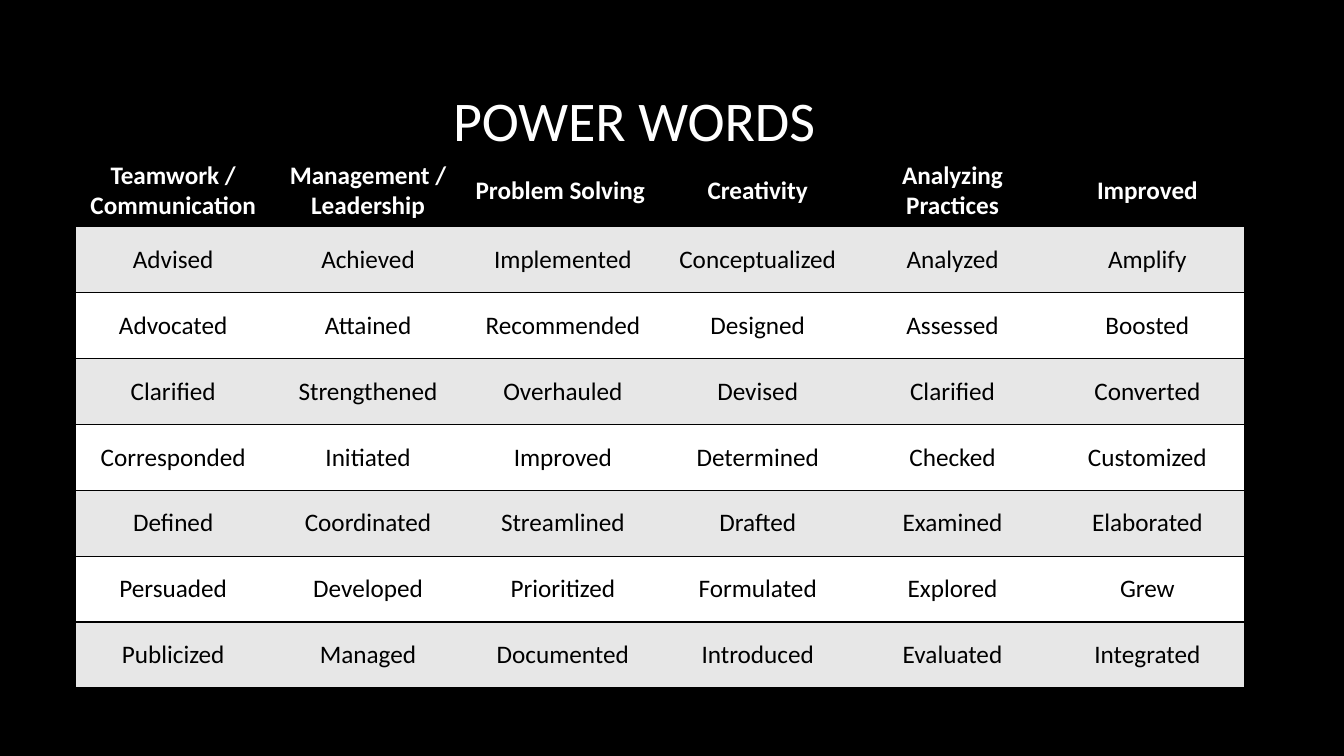
from dataclasses import dataclass

from lxml import etree
from pptx import Presentation
from pptx.dml.color import RGBColor
from pptx.enum.text import MSO_ANCHOR, MSO_AUTO_SIZE, PP_ALIGN
from pptx.oxml.ns import qn
from pptx.table import _Cell
from pptx.text.text import _Paragraph
from pptx.util import Cm, Pt

LEFT, MID = PP_ALIGN.LEFT, PP_ALIGN.CENTER
TOP, CENTER = MSO_ANCHOR.TOP, MSO_ANCHOR.MIDDLE
FIXED = MSO_AUTO_SIZE.NONE

FONT = "Calibri"
COLORS = {"black": "000000", "white": "FFFFFF", "gray": "E7E7E7"}
NO_STYLE = "{2D5ABB26-0587-4C30-8999-92F81FD0307C}"
COL_W, HEAD_H, ROW_H = Cm(4.91), Cm(1.8), Cm(1.66)


@dataclass
class Group:
    head: list[str]
    words: list[str]
    align: PP_ALIGN = MID
    anchor: MSO_ANCHOR = CENTER


GROUPS = [
    Group(["Teamwork /", "Communication"],
          ["Advised", "Advocated", "Clarified", "Corresponded", "Defined",
           "Persuaded", "Publicized"], anchor=TOP),
    Group(["Management / Leadership"],
          ["Achieved", "Attained", "Strengthened", "Initiated", "Coordinated",
           "Developed", "Managed"], anchor=TOP),
    Group(["Problem Solving"],
          ["Implemented", "Recommended", "Overhauled", "Improved",
           "Streamlined", "Prioritized", "Documented"], align=LEFT),
    Group(["Creativity"],
          ["Conceptualized", "Designed", "Devised", "Determined", "Drafted",
           "Formulated", "Introduced"]),
    Group(["Analyzing Practices"],
          ["Analyzed", "Assessed", "Clarified", "Checked", "Examined",
           "Explored", "Evaluated"], anchor=TOP),
    Group(["Improved"],
          ["Amplify", "Boosted", "Converted", "Customized", "Elaborated",
           "Grew", "Integrated"]),
]


def color(name: str) -> RGBColor:
    return RGBColor.from_string(COLORS[name])


def add_run(para: _Paragraph, text: str, size: int, ink: str,
            bold: bool = False) -> None:
    run = para.add_run()
    run.text = text
    font = run.font
    font.name, font.size, font.bold = FONT, Pt(size), bold
    font.color.rgb = color(ink)


def add_lines(cell: _Cell, sides: str) -> None:
    """Draw a black line on each side named, in the order L, R, T, B."""
    props = cell._tc.get_or_add_tcPr()
    for side in sides:
        line = etree.SubElement(props, qn(f"a:ln{side}"), w=str(Pt(1)))
        fill = etree.SubElement(line, qn("a:solidFill"))
        etree.SubElement(fill, qn("a:srgbClr"), val=COLORS["black"])


def fill_cell(cell: _Cell, lines: list[str], back: str, ink: str, sides: str,
              align: PP_ALIGN, anchor: MSO_ANCHOR, bold: bool) -> None:
    add_lines(cell, sides)
    cell.fill.solid()
    cell.fill.fore_color.rgb = color(back)
    cell.vertical_anchor = anchor
    frame = cell.text_frame
    for i, text in enumerate(lines):
        para = frame.add_paragraph() if i else frame.paragraphs[0]
        para.alignment = align
        add_run(para, text, 18, ink, bold)


def main() -> None:
    deck = Presentation()
    deck.slide_width, deck.slide_height = Cm(33.87), Cm(19.05)
    slide = deck.slides.add_slide(deck.slide_layouts[5])
    slide.background.fill.solid()
    slide.background.fill.fore_color.rgb = color("black")

    # Title
    title = slide.shapes.title
    title.left, title.top = Cm(1.91), Cm(1.7)
    title.width, title.height = Cm(28.14), Cm(2.6)
    frame = title.text_frame
    frame.auto_size, frame.vertical_anchor = FIXED, CENTER
    frame.paragraphs[0].alignment = MID
    add_run(frame.paragraphs[0], "POWER WORDS", 40, "white")

    # Empty table with plain style
    count = len(GROUPS[0].words)
    shape = slide.shapes.add_table(
        count + 1, len(GROUPS), Cm(1.91), Cm(3.91),
        COL_W * len(GROUPS), HEAD_H + ROW_H * count)
    table = shape.table
    table._tbl.tblPr.find(qn("a:tableStyleId")).text = NO_STYLE
    for col in table.columns:
        col.width = COL_W
    for i, row in enumerate(table.rows):
        row.height = ROW_H if i else HEAD_H

    # One column of words per group
    last = len(GROUPS) - 1
    for c, group in enumerate(GROUPS):
        sides = {0: "LTB", last: "RTB"}.get(c, "TB")
        fill_cell(table.cell(0, c), group.head, "black", "white", sides,
                  group.align, group.anchor, True)
        for r, word in enumerate(group.words, 1):
            back = "gray" if r % 2 else "white"
            fill_cell(table.cell(r, c), [word], back, "black", sides,
                      MID, CENTER, False)

    deck.save("out.pptx")


if __name__ == "__main__":
    main()
